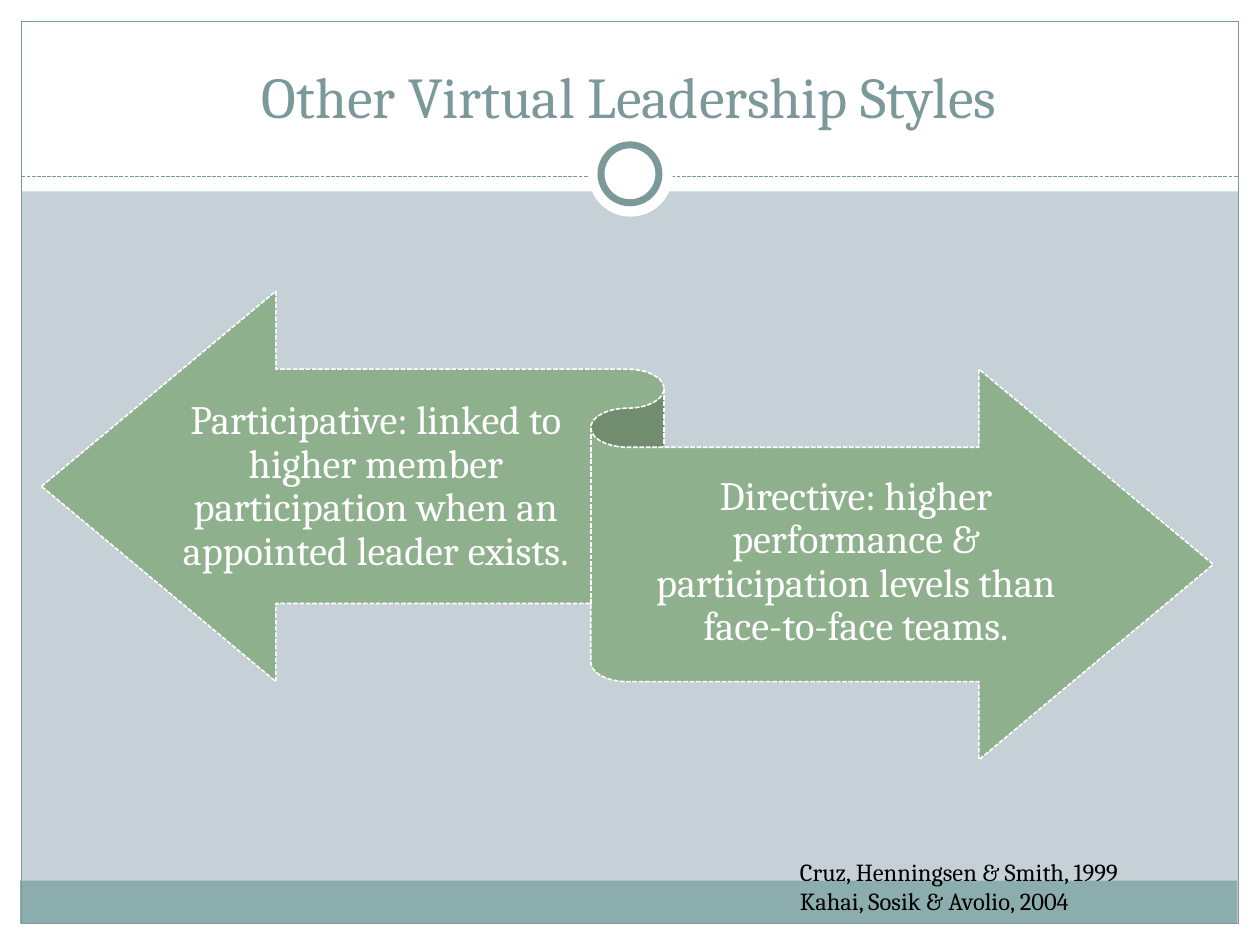
from typing import NamedTuple, Optional

from pptx import Presentation
from pptx.dml.color import RGBColor
from pptx.enum.dml import MSO_LINE
from pptx.enum.shapes import MSO_CONNECTOR, MSO_SHAPE
from pptx.enum.text import MSO_ANCHOR, MSO_AUTO_SIZE, PP_ALIGN
from pptx.oxml.ns import qn
from pptx.util import Inches, Pt

WHITE = RGBColor(0xFF, 0xFF, 0xFF)
BLACK = RGBColor(0, 0, 0)
MIST = RGBColor(0xC5, 0xD1, 0xD7)
TEAL = RGBColor(0x8C, 0xAD, 0xAE)
SLATE = RGBColor(0x7C, 0x99, 0x9A)
GREEN = RGBColor(0x8F, 0xB0, 0x8C)
FONT = "Cambria"


class Box(NamedTuple):
    left: float
    top: float
    width: float
    height: float

    def lengths(self) -> list:
        return [Inches(v) for v in self]


class Panel(NamedTuple):
    kind: MSO_SHAPE
    box: Box
    fill: Optional[RGBColor] = WHITE
    line: Optional[RGBColor] = None
    weight: float = 0.75


class Style(NamedTuple):
    box: Box
    text: str


FRAME = [
    Panel(MSO_SHAPE.RECTANGLE, Box(0, 7.33, 10, 0.17)),
    Panel(MSO_SHAPE.RECTANGLE, Box(0, 0, 10, 1.52)),
    Panel(MSO_SHAPE.RECTANGLE, Box(0, 0, 0.17, 7.5)),
    Panel(MSO_SHAPE.RECTANGLE, Box(9.83, 0, 0.17, 7.5)),
    Panel(MSO_SHAPE.RECTANGLE, Box(0.16, 6.99, 9.66, 0.34), TEAL),
    Panel(MSO_SHAPE.RECTANGLE, Box(0.17, 0.17, 9.66, 7.16), None, SLATE),
]
RINGS = [
    Panel(MSO_SHAPE.OVAL, Box(4.67, 1.05, 0.67, 0.67)),
    Panel(MSO_SHAPE.OVAL, Box(4.77, 1.15, 0.46, 0.46), WHITE, SLATE, 4),
]
RIBBON = Panel(MSO_SHAPE.LEFT_RIGHT_RIBBON, Box(0.33, 2.31, 9.3, 3.72), GREEN, WHITE, 0.9)
STYLES = [
    Style(Box(1.45, 2.96, 3.07, 1.82),
          "Participative: linked to higher member participation when an appointed leader exists."),
    Style(Box(4.98, 3.56, 3.63, 1.82),
          "Directive: higher performance & participation levels than face-to-face teams."),
]
SOURCES = ["Cruz, Henningsen & Smith, 1999", "Kahai, Sosik & Avolio, 2004"]


def add_panel(shapes, panel: Panel):
    sp = shapes.add_shape(panel.kind, *panel.box.lengths())
    sp.shadow.inherit = False
    if panel.fill is None:
        sp.fill.background()
    else:
        sp.fill.solid()
        sp.fill.fore_color.rgb = panel.fill
    if panel.line is None:
        sp.line.fill.background()
    else:
        sp.line.color.rgb = panel.line
        sp.line.width = Pt(panel.weight)
    return sp


def set_font(p, size: float, color: RGBColor) -> None:
    p.font.name = FONT
    p.font.size = Pt(size)
    p.font.color.rgb = color


def add_divider(shapes) -> None:
    y = Inches(1.4)
    cxn = shapes.add_connector(MSO_CONNECTOR.STRAIGHT, Inches(0.17), y, Inches(9.83), y)
    cxn.line.color.rgb = SLATE
    cxn.line.width = Pt(0.75)
    cxn.line.dash_style = MSO_LINE.SQUARE_DOT
    sp_pr = cxn._element.spPr
    sp_pr.append(sp_pr.makeelement(qn("a:effectLst"), {}))


def add_title(slide, text: str) -> None:
    """Fill the title placeholder and bring it in front of the frame."""
    title = slide.shapes.title
    slide.shapes._spTree.append(title._element)
    title.left, title.top, title.width, title.height = Box(0.33, 0.25, 9.33, 0.83).lengths()
    tf = title.text_frame
    tf.text = text
    tf.vertical_anchor = MSO_ANCHOR.BOTTOM
    p = tf.paragraphs[0]
    p.alignment = PP_ALIGN.CENTER
    set_font(p, 33, SLATE)


def add_style(shapes, style: Style) -> None:
    tf = shapes.add_textbox(*style.box.lengths()).text_frame
    tf.word_wrap = True
    tf.vertical_anchor = MSO_ANCHOR.MIDDLE
    tf.margin_left = tf.margin_right = 0
    tf.margin_top, tf.margin_bottom = Inches(0.09), Inches(0.1)
    tf.text = style.text
    p = tf.paragraphs[0]
    p.alignment = PP_ALIGN.CENTER
    p.line_spacing = 0.9
    set_font(p, 23, WHITE)


def add_sources(shapes) -> None:
    tf = shapes.add_textbox(*Box(6.25, 6.75, 3.33, 0.57).lengths()).text_frame
    tf.word_wrap = True
    tf.auto_size = MSO_AUTO_SIZE.SHAPE_TO_FIT_TEXT
    tf.text = "\n".join(SOURCES)
    for p in tf.paragraphs:
        set_font(p, 14, BLACK)


def main() -> None:
    prs = Presentation()
    prs.slide_width, prs.slide_height = Inches(10), Inches(7.5)
    slide = prs.slides.add_slide(prs.slide_layouts[5])
    slide.background.fill.solid()
    slide.background.fill.fore_color.rgb = MIST

    for panel in FRAME:
        add_panel(slide.shapes, panel)
    add_divider(slide.shapes)
    for panel in RINGS:
        add_panel(slide.shapes, panel)
    add_title(slide, "Other Virtual Leadership Styles")

    diagram = slide.shapes.add_group_shape().shapes
    add_panel(diagram, RIBBON).line.dash_style = MSO_LINE.SQUARE_DOT
    for style in STYLES:
        add_style(diagram, style)
    add_sources(slide.shapes)
    prs.save("out.pptx")


if __name__ == "__main__":
    main()
